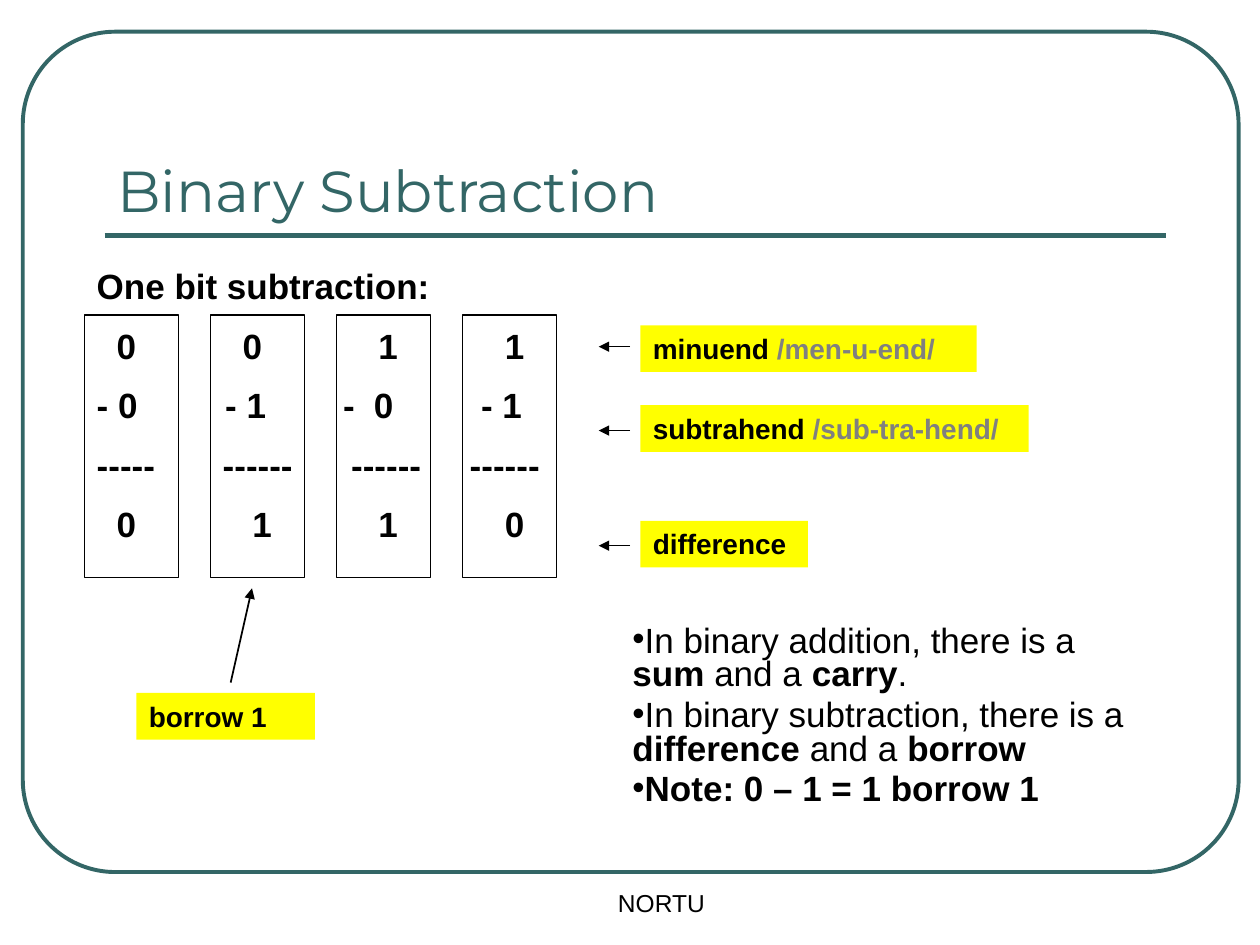
"""Build the Binary Subtraction slide."""
from dataclasses import dataclass

from lxml.etree import SubElement
from pptx import Presentation
from pptx.dml.color import RGBColor
from pptx.enum.shapes import MSO_CONNECTOR, MSO_SHAPE
from pptx.enum.text import MSO_ANCHOR, PP_ALIGN
from pptx.oxml.ns import qn
from pptx.util import Cm, Pt


@dataclass(frozen=True)
class Theme:
    teal: RGBColor = RGBColor(0x33, 0x66, 0x66)
    ink: RGBColor = RGBColor(0, 0, 0)
    gray: RGBColor = RGBColor(0x80, 0x80, 0x80)
    yellow: RGBColor = RGBColor(0xFF, 0xFF, 0)
    title_font: str = "Montserrat"
    body_font: str = "Arial"
    title_size: int = 33
    body_size: int = 20
    label_size: int = 16
    footer_size: int = 14


theme = Theme()


def add_text(para, text, size, bold=False, color=theme.ink, font=theme.body_font):
    span = para.add_run()
    span.text = text
    span.font.size = Pt(size)
    span.font.bold = bold
    span.font.name = font
    span.font.color.rgb = color


def add_line(start, end, color, width, arrow=True):
    line = page.shapes.add_connector(
        MSO_CONNECTOR.STRAIGHT, *[Cm(value) for value in start + end])
    line.line.color.rgb = color
    line.line.width = Pt(width)
    if arrow:
        SubElement(line.line._get_or_add_ln(), qn("a:tailEnd"), type="triangle")
    SubElement(line._element.spPr, qn("a:effectLst"))


deck = Presentation()
deck.slide_width, deck.slide_height = Cm(25.4), Cm(19.05)
page = deck.slides.add_slide(deck.slide_layouts[6])

frame = page.shapes.add_shape(
    MSO_SHAPE.ROUNDED_RECTANGLE, Cm(0.46), Cm(0.64), Cm(24.51), Cm(16.94))
frame.adjustments[0] = 0.11
frame.shadow.inherit = False
frame.fill.background()
frame.line.color.rgb = theme.teal
frame.line.width = Pt(2.25)
add_line((2.11, 4.75), (23.5, 4.75), theme.teal, 3, arrow=False)

footer = page.shapes.add_textbox(Cm(9.32), Cm(17.78), Cm(8.03), Cm(1.27))
footer.text_frame.word_wrap = True
para = footer.text_frame.paragraphs[0]
para.alignment = PP_ALIGN.CENTER
add_text(para, "NORTU", theme.footer_size)

title = page.shapes.add_textbox(Cm(2.11), Cm(1.47), Cm(21.36), Cm(3.18))
title.text_frame.word_wrap = True
title.text_frame.vertical_anchor = MSO_ANCHOR.BOTTOM
add_text(title.text_frame.paragraphs[0], "Binary Subtraction",
         theme.title_size, color=theme.teal, font=theme.title_font)

notes = [
    [("In binary addition, there is a ", False), ("sum", True),
     (" and a ", False), ("carry", True), (".", False)],
    [("In binary subtraction, there is a ", False), ("difference", True),
     (" and a ", False), ("borrow", True)],
    [("Note: 0 – 1 = 1 borrow 1", True)],
]
body = page.shapes.add_textbox(Cm(12.5), Cm(12.5), Cm(11), Cm(4.01)).text_frame
body.word_wrap = True
for index, spans in enumerate(notes):
    para = body.add_paragraph() if index else body.paragraphs[0]
    para.line_spacing = 0.8
    para.space_before = Pt(4)
    bullet = para._p.get_or_add_pPr()
    SubElement(bullet, qn("a:buFont"), typeface=theme.body_font)
    SubElement(bullet, qn("a:buChar"), char="•")
    for text, bold in spans:
        add_text(para, text, theme.body_size, bold)

sums = [
    ("\t0\t0\t1\t1", (0.4, 2.94, 5.68, 8.23)),
    ("- 0\t- 1\t-\t0\t- 1", (2.59, 4.97, 5.59, 7.75)),
    ("-----\t------\t------\t------", (2.54, 5.13, 7.52)),
    ("\t0\t1\t1\t0", (0.4, 3.14, 5.68, 8.23)),
]
working = page.shapes.add_textbox(Cm(1.7), Cm(5.21), Cm(10.16), Cm(8.05)).text_frame
working.word_wrap = True
add_text(working.paragraphs[0], "One bit subtraction:", theme.body_size, True)
for text, stops in sums:
    para = working.add_paragraph()
    para.space_before = Pt(10)
    tabs = SubElement(para._p.get_or_add_pPr(), qn("a:tabLst"))
    for stop in stops:
        SubElement(tabs, qn("a:tab"), pos=str(Cm(stop)), algn="l")
    add_text(para, text, theme.body_size, True)

for column in range(4):
    box = page.shapes.add_shape(
        MSO_SHAPE.RECTANGLE, Cm(1.7 + 2.54 * column), Cm(6.35), Cm(1.9), Cm(5.29))
    box.shadow.inherit = False
    box.fill.background()
    box.line.color.rgb = theme.ink
    box.line.width = Pt(0.75)

labels = [
    ("minuend ", "/men-u-end/", 12.91, 6.56, 6.78),
    ("subtrahend ", "/sub-tra-hend/", 12.91, 8.17, 7.83),
    ("difference", "", 12.91, 10.5, 3.38),
    ("borrow 1", "", 2.75, 13.97, 3.6),
]
for term, sound, left, top, width in labels:
    label = page.shapes.add_shape(
        MSO_SHAPE.RECTANGLE, Cm(left), Cm(top), Cm(width), Cm(0.94))
    label.shadow.inherit = False
    label.fill.solid()
    label.fill.fore_color.rgb = theme.yellow
    label.line.fill.background()
    label.text_frame.vertical_anchor = MSO_ANCHOR.TOP
    para = label.text_frame.paragraphs[0]
    para.alignment = PP_ALIGN.LEFT
    add_text(para, term, theme.label_size, True)
    if sound:
        add_text(para, sound, theme.label_size, True, theme.gray)

for height in (6.99, 8.68, 11):
    add_line((12.7, height), (12.07, height), theme.ink, 0.75)
add_line((4.65, 13.76), (5.08, 11.86), theme.ink, 1)

deck.save("out.pptx")
